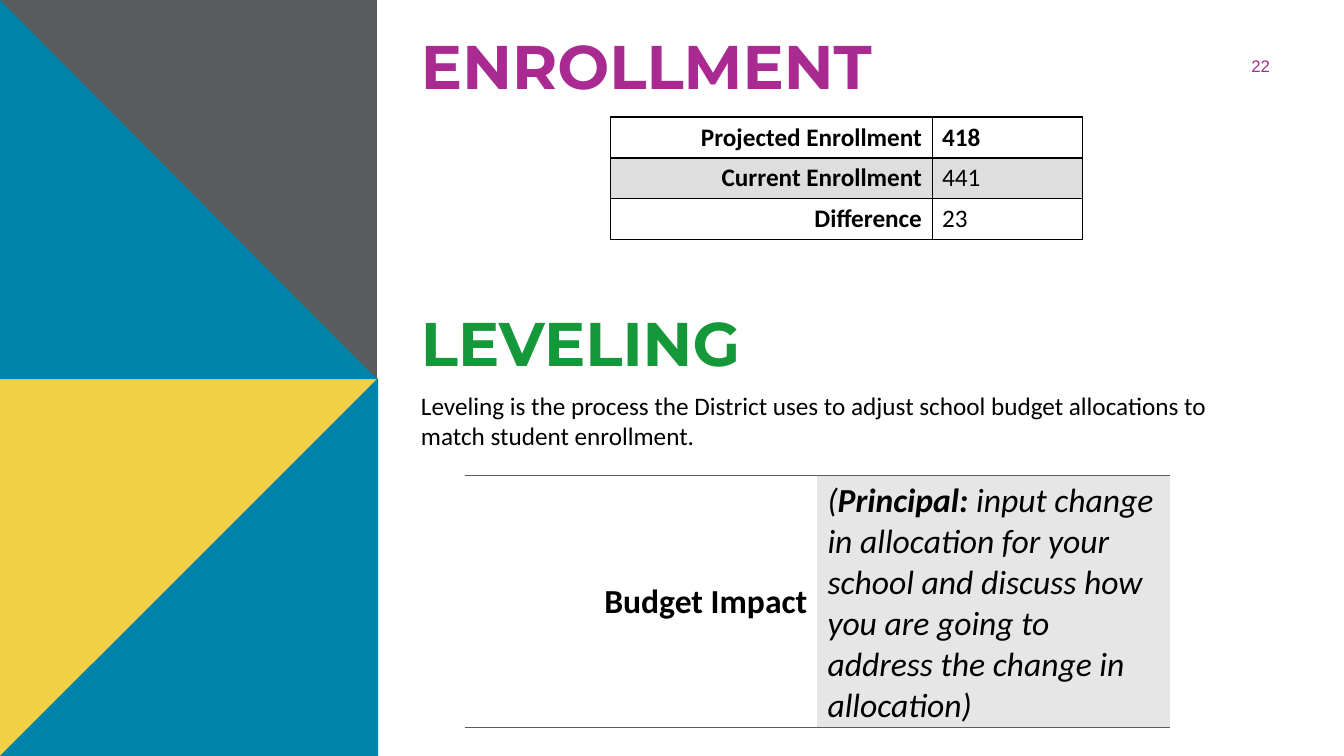
from dataclasses import dataclass

from lxml import etree
from pptx import Presentation
from pptx import util as u
from pptx.dml.color import RGBColor
from pptx.enum import text
from pptx.oxml.ns import qn

Cm = u.Cm


@dataclass(frozen=True)
class Theme:
    yellow: str = "F3CF45"
    blue: str = "0083A9"
    grey: str = "595B5D"
    purple: str = "A92A91"
    green: str = "159839"
    black: str = "000000"
    band: str = "DEDEDF"
    note: str = "E7E6E6"
    heading_font: str = "Montserrat"
    body_font: str = "Calibri"
    number_font: str = "Arial"
    heading_size: int = 44
    impact_size: int = 24
    body_size: int = 18
    number_size: int = 12


THEME = Theme()
LEFT, RIGHT, CENTER = text.PP_ALIGN.LEFT, text.PP_ALIGN.RIGHT, text.PP_ALIGN.CENTER
TOP, MIDDLE = text.MSO_ANCHOR.TOP, text.MSO_ANCHOR.MIDDLE


def add_run(paragraph, wording, size, color=THEME.black, font=THEME.body_font,
            bold=False, italic=False):
    run = paragraph.add_run()
    run.text = wording
    run.font.name = font
    run.font.size = u.Pt(size)
    run.font.bold = bold
    run.font.italic = italic
    run.font.color.rgb = RGBColor.from_string(color)


def add_text(slide, box, wording, size, align=LEFT, anchor=TOP, **style):
    frame = slide.shapes.add_textbox(*map(Cm, box)).text_frame
    frame.word_wrap = True
    frame.vertical_anchor = anchor
    frame.paragraphs[0].alignment = align
    add_run(frame.paragraphs[0], wording, size, **style)


def add_heading(slide, box, wording, color):
    add_text(slide, box, wording, THEME.heading_size, color=color,
             font=THEME.heading_font, bold=True)


def add_polygon(slide, points, color):
    start, *rest = [(Cm(x), Cm(y)) for x, y in points]
    builder = slide.shapes.build_freeform(*start)
    builder.add_line_segments(rest, close=True)
    polygon = builder.convert_to_shape()
    polygon.shadow.inherit = False
    polygon.fill.solid()
    polygon.fill.fore_color.rgb = RGBColor.from_string(color)
    polygon.line.fill.background()


def add_split_panel(slide, box, back, front, falling):
    """A panel whose lower half, below one diagonal, has the front colour."""
    left, top, width, height = box
    right, bottom = left + width, top + height
    corners = [(left, top), (right, top), (right, bottom), (left, bottom)]
    add_polygon(slide, corners, back)
    add_polygon(slide, [corners[0 if falling else 1], *corners[2:]], front)


def style_cell(cell, fill, sides, color):
    """Fill the cell and draw only the named sides (L, R, T, B)."""
    if fill:
        cell.fill.solid()
        cell.fill.fore_color.rgb = RGBColor.from_string(fill)
    else:
        cell.fill.background()
    properties = cell._tc.get_or_add_tcPr()
    for index, side in enumerate("LRTB"):
        border = etree.Element(qn(f"a:ln{side}"), w=str(u.Pt(1)))
        if side in sides:
            solid = etree.SubElement(border, qn("a:solidFill"))
            etree.SubElement(solid, qn("a:srgbClr"), val=color)
        else:
            etree.SubElement(border, qn("a:noFill"))
        properties.insert(index, border)


def add_plain_table(slide, box, column_widths, row_count):
    table = slide.shapes.add_table(row_count, len(column_widths), *map(Cm, box)).table
    table.first_row = table.horz_banding = False
    for column, width in zip(table.columns, column_widths):
        column.width = Cm(width)
    return table


def add_enrollment_table(slide, box):
    figures = [("Projected Enrollment", "418", True),
               ("Current Enrollment", "441", False),
               ("Difference", "23", False)]
    label_width = 8.1
    table = add_plain_table(slide, box, (label_width, box[2] - label_width), len(figures))
    for row, (label, count, bold_count) in enumerate(figures):
        entries = [(label, RIGHT, True), (count, LEFT, bold_count)]
        for column, (wording, align, bold) in enumerate(entries):
            cell = table.cell(row, column)
            paragraph = cell.text_frame.paragraphs[0]
            paragraph.alignment = align
            add_run(paragraph, wording, THEME.body_size, bold=bold)
            style_cell(cell, THEME.band if row % 2 else None, "LRTB", THEME.black)


def add_impact_table(slide, box):
    table = add_plain_table(slide, box, (box[2] / 2, box[2] / 2), 1)
    label, guidance = table.cell(0, 0), table.cell(0, 1)
    for cell, fill in ((label, None), (guidance, THEME.note)):
        cell.vertical_anchor = MIDDLE
        style_cell(cell, fill, "TB", THEME.grey)
    label_line = label.text_frame.paragraphs[0]
    label_line.alignment = RIGHT
    add_run(label_line, "Budget Impact", THEME.impact_size, bold=True)
    guidance_line = guidance.text_frame.paragraphs[0]
    for wording, bold in (
            ("(", False),
            ("Principal:", True),
            (" input change in allocation for your school and discuss how you are "
             "going to address the change in allocation)", False)):
        add_run(guidance_line, wording, THEME.impact_size, bold=bold, italic=True)


def add_side_panels(slide, box):
    left, top, width, height = box
    half = height / 2
    add_split_panel(slide, (left, top + half, width, half),
                    THEME.yellow, THEME.blue, falling=False)
    add_split_panel(slide, (left, top, width - 0.03, half + 0.03),
                    THEME.grey, THEME.blue, falling=True)


def add_enrollment(slide, box):
    left, top, width, _ = box
    add_heading(slide, (left, top, 18.8, 2.13), "ENROLLMENT", THEME.purple)
    add_text(slide, (left + width - 2.74, top + 0.69, 2.74, 0.76), "22",
             THEME.number_size, align=CENTER, anchor=MIDDLE,
             color=THEME.purple, font=THEME.number_font)
    add_enrollment_table(slide, (left + 5.03, top + 2.37, 11.9, 3.09))


def add_leveling(slide, box):
    left, top, _, _ = box
    add_heading(slide, (left, top, 18.8, 2.13), "LEVELING", THEME.green)
    add_text(slide, (left, top + 2.13, 20.98, 1.8),
             "Leveling is the process the District uses to adjust school budget "
             "allocations to match student enrollment.", THEME.body_size)
    add_impact_table(slide, (left + 1.35, top + 4.42, 17.78, 6.35))


def main():
    deck = Presentation()
    deck.slide_width, deck.slide_height = Cm(33.87), Cm(19.05)
    slide = deck.slides.add_slide(deck.slide_layouts[6])
    add_side_panels(slide, (0, 0, 9.53, 19.05))
    add_enrollment(slide, (10.36, 0.58, 22.78, 5.5))
    add_leveling(slide, (10.36, 7.57, 22.78, 10.8))
    deck.save("out.pptx")


if __name__ == "__main__":
    main()
